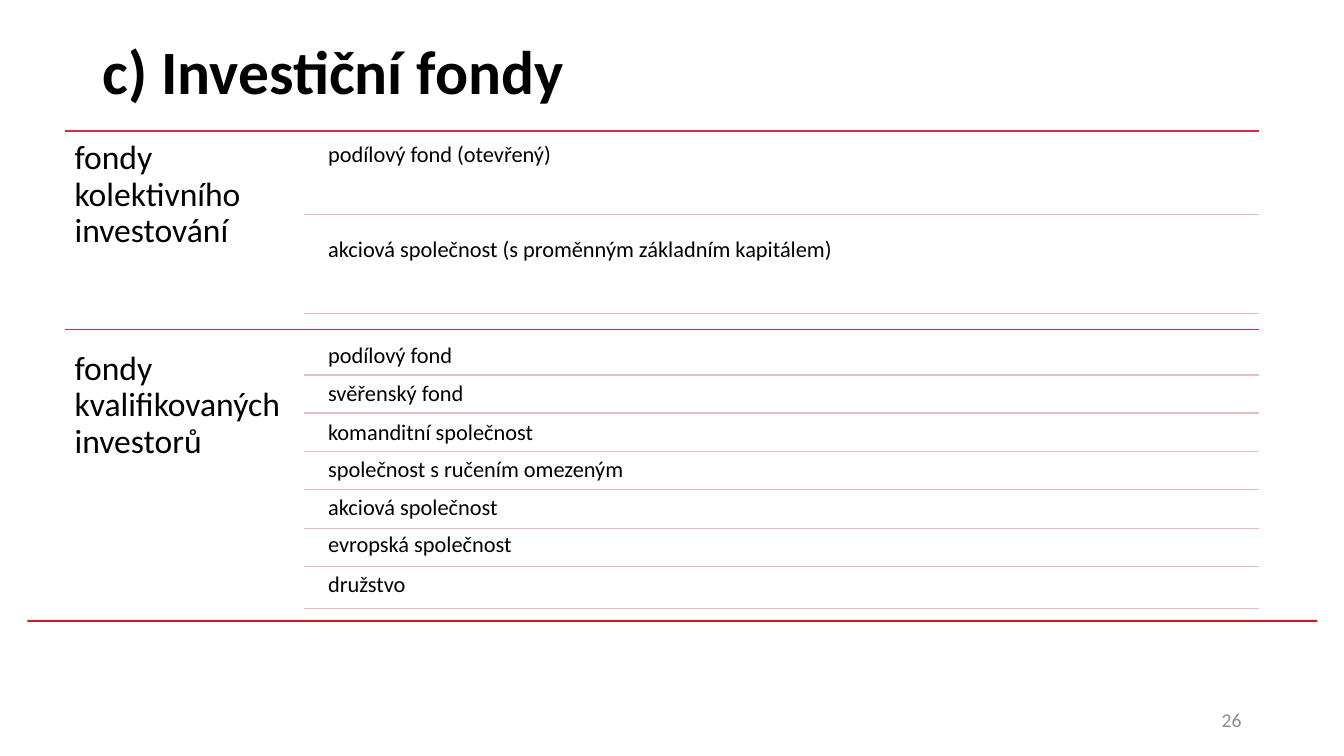
from dataclasses import dataclass

import pptx
import pptx.dml.color
import pptx.enum.shapes
import pptx.enum.text
import pptx.oxml.ns
import pptx.util
from lxml import etree

Cm = pptx.util.Cm
Pt = pptx.util.Pt
PP_ALIGN = pptx.enum.text.PP_ALIGN
MSO_ANCHOR = pptx.enum.text.MSO_ANCHOR

LEFT, RIGHT = 1.63, 31.72
RULE_LEFT, FORM_LEFT = 7.65, 8.1
RED, PINK = "D22D40", "EABEC0"


@dataclass
class Form:
    name: str
    top: float
    rule: float


@dataclass
class FundGroup:
    name: str
    rule: float
    top: float
    height: float
    form_height: float
    forms: list[Form]


GROUPS = [
    FundGroup("fondy kolektivního investování", 3.3, 3.3, 3.2, 2.82, [
        Form("podílový fond (otevřený)", 3.45, 5.41),
        Form("akciová společnost (s proměnným základním kapitálem)", 5.82, 7.9),
    ]),
    FundGroup("fondy kvalifikovaných investorů", 8.31, 8.61, 6.05, 0.81, [
        Form("podílový fond", 8.51, 9.45),
        Form("svěřenský fond", 9.47, 10.41),
        Form("komanditní společnost", 10.44, 11.38),
        Form("společnost s ručením omezeným", 11.38, 12.34),
        Form("akciová společnost", 12.34, 13.31),
        Form("evropská společnost", 13.26, 14.27),
        Form("družstvo", 14.27, 15.34),
    ]),
]


def color(value: str) -> pptx.dml.color.RGBColor:
    return pptx.dml.color.RGBColor.from_string(value)


def add_text(s, text: str, left: float, top: float, width: float, height: float,
             size: float, inset: float = 0.25, fill: str = "000000",
             bold: bool = False, align=PP_ALIGN.LEFT, anchor=MSO_ANCHOR.TOP) -> None:
    sp = s.shapes.add_textbox(Cm(left), Cm(top), Cm(width), Cm(height))
    tf = sp.text_frame
    tf.word_wrap = True
    tf.vertical_anchor = anchor
    tf.margin_left = tf.margin_right = tf.margin_top = tf.margin_bottom = Cm(inset)
    tf.text = text
    p = tf.paragraphs[0]
    p.alignment = align
    p.line_spacing = 0.9
    r = p.runs[0]
    r.font.name = "Calibri"
    r.font.size = Pt(size)
    r.font.bold = bold
    r.font.color.rgb = color(fill)


def add_rule(s, left: float, y: float, line: str) -> None:
    cn = s.shapes.add_connector(pptx.enum.shapes.MSO_CONNECTOR.STRAIGHT,
                                Cm(left), Cm(y), Cm(RIGHT), Cm(y))
    cn.line.color.rgb = color(line)
    cn.line.width = Pt(1)
    etree.SubElement(cn._element.spPr, pptx.oxml.ns.qn("a:effectLst"))


def add_group(s, group: FundGroup) -> None:
    add_rule(s, LEFT, group.rule, RED)
    add_text(s, group.name, LEFT, group.top, RULE_LEFT - LEFT, group.height, 24)
    for form in group.forms:
        add_text(s, form.name, FORM_LEFT, form.top, RIGHT - FORM_LEFT,
                 group.form_height, 16, inset=0.17)
        add_rule(s, RULE_LEFT, form.rule, PINK)


def main() -> None:
    prs = pptx.Presentation()
    prs.slide_width, prs.slide_height = Cm(33.87), Cm(19.05)
    s = prs.slides.add_slide(prs.slide_layouts[6])

    bar = s.shapes.add_shape(pptx.enum.shapes.MSO_SHAPE.RECTANGLE,
                             Cm(0.69), Cm(15.62), Cm(32.51), Cm(0.05))
    bar.shadow.inherit = False
    bar.fill.solid()
    bar.fill.fore_color.rgb = color("CD1F21")
    bar.line.fill.background()

    add_text(s, "c) Investiční fondy", 2.33, 0.05, 29.21, 3.68, 44,
             bold=True, anchor=MSO_ANCHOR.MIDDLE)
    add_text(s, "26", 23.92, 17.66, 7.62, 1.01, 14, fill="8C8C8C",
             align=PP_ALIGN.RIGHT, anchor=MSO_ANCHOR.MIDDLE)
    for group in GROUPS:
        add_group(s, group)

    prs.save("out.pptx")


if __name__ == "__main__":
    main()
